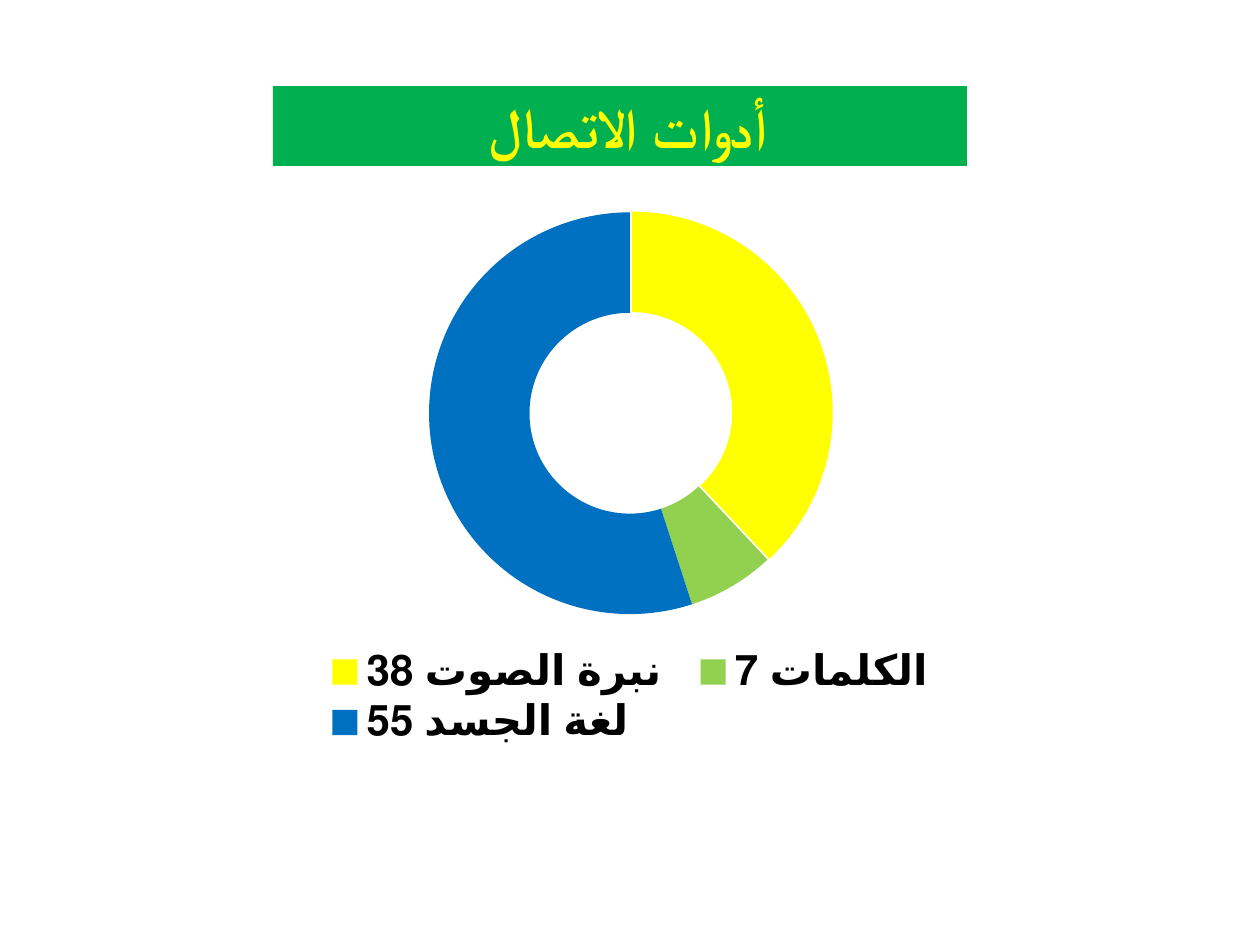
from pptx import Presentation, util as u
from pptx.chart.data import CategoryChartData
from pptx.dml.color import RGBColor
from pptx.enum import chart as charts, text
from pptx.oxml import parse_xml
from pptx.oxml.ns import nsdecls

PX = u.Inches(1) / 126


def box(*lengths):
    return [u.Emu(round(length * PX)) for length in lengths]


def paint(fill, color):
    fill.solid()
    fill.fore_color.rgb = RGBColor.from_string(color)


presentation = Presentation()
presentation.slide_width, presentation.slide_height = box(1260, 945)
slide = presentation.slides.add_slide(presentation.slide_layouts[5])

# Title band
title = slide.shapes.title
title.left, title.top, title.width, title.height = box(273, 86, 694, 80)
paint(title.fill, "00B050")
frame = title.text_frame
frame.auto_size = text.MSO_AUTO_SIZE.NONE
frame.vertical_anchor = text.MSO_ANCHOR.MIDDLE
paragraph = frame.paragraphs[0]
paragraph.alignment = text.PP_ALIGN.CENTER
paragraph._p.get_or_add_pPr().set("rtl", "1")
run = paragraph.add_run()
run.text = "أدوات الاتصال "
run.font.name, run.font.size, run.font.bold = "Calibri", u.Pt(32), True
paint(run.font.fill, "FFFF00")

# Doughnut of communication tools
tools = [
    ("نبرة الصوت 38 ", 38, "FFFF00"),
    ("الكلمات 7", 7, "92D050"),
    ("لغة الجسد 55", 55, "0070C0"),
]
data = CategoryChartData()
data.categories = [name for name, share, color in tools]
data.add_series("Series 1", [share for name, share, color in tools])
chart = slide.shapes.add_chart(
    charts.XL_CHART_TYPE.DOUGHNUT, *box(210, 193, 840, 559), data).chart
chart.has_title = False
chart.font.name, chart.font.size, chart.font.bold = "Calibri", u.Pt(24), True
paint(chart.font.fill, "000000")

plot = chart.plots[0]
plot.vary_by_categories = True
plot.has_data_labels = False
series = plot.series[0]
for index, (name, share, color) in enumerate(tools):
    paint(series.points[index].format.fill, color)

# Pull the first slice slightly outwards
first_slice = series._element.find("{*}dPt")
first_slice.find("{*}spPr").addprevious(
    parse_xml(f'<c:explosion {nsdecls("c")} val="2"/>'))

# Legend
chart.has_legend = True
chart.legend.position = charts.XL_LEGEND_POSITION.BOTTOM
chart.legend.include_in_layout = False

presentation.save("out.pptx")
